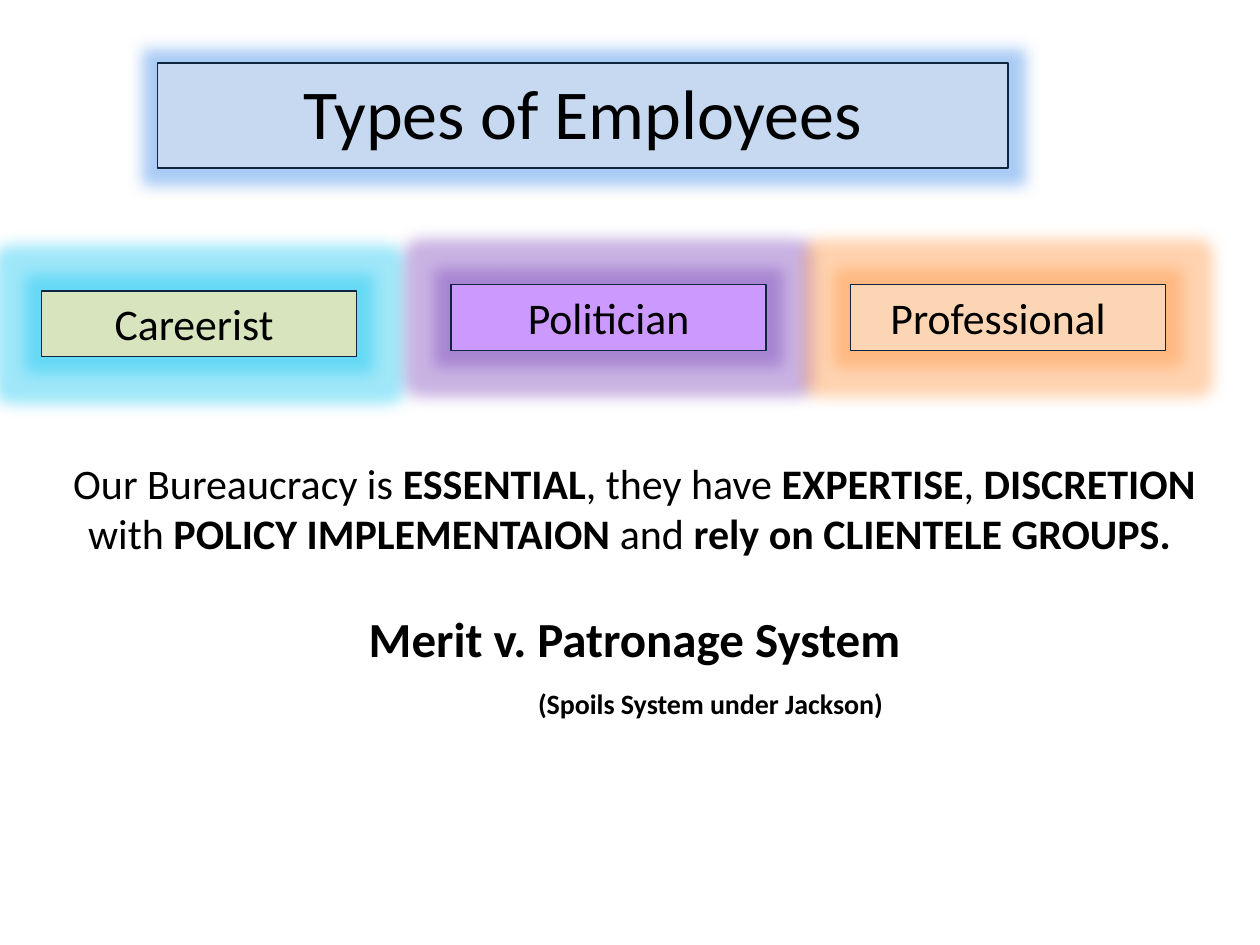
import pptx
import pptx.util
import pptx.oxml
import pptx.dml.color
import pptx.enum.shapes
import pptx.enum.text
from pptx.util import Inches

COLORS = {
    "text": "000000", "outline": "0F243E",
    "title": "C6D9F1", "title_glow": "287DE6",
    "careerist": "D7E4BD", "careerist_glow": "0FC5F2",
    "politician": "CC99FF", "politician_glow": "7841B9",
    "professional": "FCD5B5", "professional_glow": "FF913A",
}
DRAWING_NS = "http://schemas.openxmlformats.org/drawingml/2006/main"


def color(name):
    """Return the named colour."""
    return pptx.dml.color.RGBColor.from_string(COLORS[name])


def place(shape, box):
    """Move a shape to a box given in inches."""
    shape.left, shape.top, shape.width, shape.height = map(Inches, box)


def style_span(span, size, bold=False):
    """Format one run of text."""
    span.font.name = "Calibri"
    span.font.size = pptx.util.Pt(size)
    span.font.bold = bold
    span.font.color.rgb = color("text")


def add_glow(shape, name):
    """Surround a shape with a soft translucent glow."""
    effects = shape._element.spPr.find(f"{{{DRAWING_NS}}}effectLst")
    if effects is not None:
        shape._element.spPr.remove(effects)
    shape._element.spPr.append(pptx.oxml.parse_xml(
        f'<a:effectLst xmlns:a="{DRAWING_NS}"><a:glow rad="{Inches(0.25)}">'
        f'<a:srgbClr val="{COLORS[name]}"><a:alpha val="40000"/></a:srgbClr>'
        '</a:glow></a:effectLst>'))


def style_label(shape, box, text, size, name):
    """Turn a shape into a filled, glowing label."""
    place(shape, box)
    shape.fill.solid()
    shape.fill.fore_color.rgb = color(name)
    shape.line.color.rgb = color("outline")
    shape.line.width = pptx.util.Pt(0.75)
    add_glow(shape, name + "_glow")
    frame = shape.text_frame
    frame.text = text
    frame.word_wrap = True
    frame.auto_size = pptx.enum.text.MSO_AUTO_SIZE.SHAPE_TO_FIT_TEXT
    frame.vertical_anchor = pptx.enum.text.MSO_ANCHOR.TOP
    para = frame.paragraphs[0]
    para.alignment = pptx.enum.text.PP_ALIGN.CENTER
    style_span(para.runs[0], size)


def add_employee_types(page):
    """Add the row of three employee types."""
    labels = [("Careerist ", "careerist", 0.33, 2.31),
              ("Politician", "politician", 3.58, 2.26),
              ("Professional  ", "professional", 6.75, 2.26)]
    for text, name, left, top in labels:
        shape = page.shapes.add_shape(
            pptx.enum.shapes.MSO_SHAPE.RECTANGLE, 0, 0, 0, 0)
        style_label(shape, (left, top, 2.5, 0.52), text, 25, name)


def fill_summary(body, box):
    """Write the centred summary of the bureaucracy."""
    place(body, box)
    frame = body.text_frame
    frame.word_wrap = True
    frame.auto_size = pptx.enum.text.MSO_AUTO_SIZE.SHAPE_TO_FIT_TEXT
    frame.vertical_anchor = pptx.enum.text.MSO_ANCHOR.TOP
    lines = [
        (24, 0, 0, [("Our Bureaucracy is ", False), ("ESSENTIAL", True),
                    (", they have ", False), ("EXPERTISE", True),
                    (", ", False), ("DISCRETION ", True), ("with", False),
                    (" POLICY IMPLEMENTAION ", True), ("and", False),
                    (" rely on CLIENTELE GROUPS. ", True)]),
        (28, 29, 0, [("Merit v. Patronage System", True)]),
        (16, 11, 1.26, [("(Spoils System under Jackson) ", True)]),
    ]
    for index, (size, gap, indent, spans) in enumerate(lines):
        para = frame.add_paragraph() if index else frame.paragraphs[0]
        para.alignment = pptx.enum.text.PP_ALIGN.CENTER
        para.space_before = pptx.util.Pt(gap)
        settings = para._p.get_or_add_pPr()
        settings.set("marL", str(Inches(indent)))
        settings.set("indent", "0")
        settings.append(pptx.oxml.parse_xml(f'<a:buNone xmlns:a="{DRAWING_NS}"/>'))
        for text, bold in spans:
            span = para.add_run()
            span.text = text
            style_span(span, size, bold)


def main():
    """Build and save the slide."""
    deck = pptx.Presentation()
    deck.slide_width, deck.slide_height = Inches(10), Inches(7.5)
    page = deck.slides.add_slide(deck.slide_layouts[1])
    style_label(page.shapes.title, (1.25, 0.5, 6.75, 0.77),
                "Types of Employees", 40, "title")
    add_employee_types(page)
    fill_summary(page.placeholders[1], (0.37, 3.58, 9.33, 2.26))
    deck.save("out.pptx")


if __name__ == "__main__":
    main()
